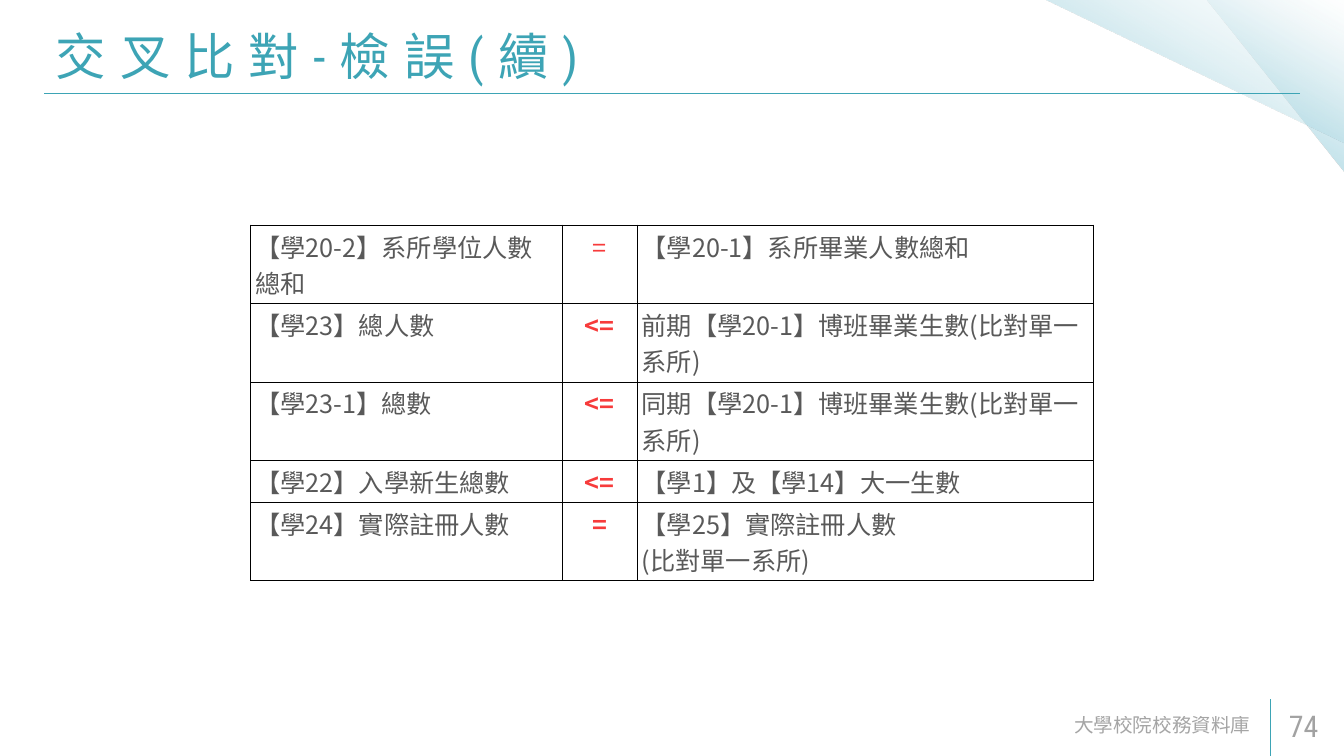
import pptx
import pptx.util
import pptx.dml.color
import pptx.enum.shapes
import pptx.enum.text
import pptx.oxml
import pptx.oxml.ns
import lxml.etree

PX = 9144  # 100 px to the inch
COLORS = {"teal": "3DA4B5", "grey": "808080", "number": "A2A2A2", "body": "595959",
          "red": "F73B3B", "border": "000000",
          "deep": "97D1E0", "mid": "AAD7E2", "pale": "E0F0F4"}
NS = pptx.oxml.ns.nsdecls("a")
ALIGN = pptx.enum.text.PP_ALIGN
ANCHOR = pptx.enum.text.MSO_ANCHOR


def add_run(p, text, size, font, color, bold=False):
    r = p.add_run()
    r.text = text
    r.font.size = pptx.util.Pt(size)
    r.font.name = font
    r.font.bold = bold
    r.font.color.rgb = pptx.dml.color.RGBColor.from_string(COLORS[color])
    return r


def set_frame(tf, align):
    tf.word_wrap = True
    tf.auto_size = pptx.enum.text.MSO_AUTO_SIZE.NONE
    tf.vertical_anchor = ANCHOR.MIDDLE
    tf.margin_left = tf.margin_right = 18 * PX
    tf.margin_top = tf.margin_bottom = 9 * PX
    p = tf.paragraphs[0]
    p.alignment = align
    return p


prs = pptx.Presentation()
prs.slide_width, prs.slide_height = 2000 * PX, 1125 * PX
s = prs.slides.add_slide(prs.slide_layouts[5])

# Corner triangles, fading out along the gradient
stops = "".join(
    f'<a:gs pos="{pos}000"><a:srgbClr val="{COLORS[name]}"><a:alpha val="{alpha}000"/></a:srgbClr></a:gs>'
    for pos, name, alpha in [(0, "deep", 100), (50, "mid", 44), (100, "pale", 0)])
gradient = (f'<a:gradFill {NS} rotWithShape="1"><a:gsLst>{stops}</a:gsLst>'
            '<a:lin ang="7200000" scaled="0"/></a:gradFill>')
for x, w, h in [(1796, 204, 257), (1554, 448, 213)]:
    sp = s.shapes.add_shape(pptx.enum.shapes.MSO_SHAPE.RIGHT_TRIANGLE, x * PX, 0, w * PX, h * PX)
    sp.rotation = 180
    sp.shadow.inherit = False
    sp.line.fill.background()
    geometry = sp._element.spPr.find(pptx.oxml.ns.qn("a:prstGeom"))
    geometry.addnext(pptx.oxml.parse_xml(gradient))

# Title rule and footer divider
for x1, y1, x2, y2 in [(66, 139, 1934, 139), (1891, 1125, 1891, 1040)]:
    line = s.shapes.add_connector(pptx.enum.shapes.MSO_CONNECTOR.STRAIGHT,
                                  x1 * PX, y1 * PX, x2 * PX, y2 * PX)
    line.line.color.rgb = pptx.dml.color.RGBColor.from_string(COLORS["teal"])
    line.line.width = pptx.util.Pt(1)
    lxml.etree.SubElement(line._element.spPr, pptx.oxml.ns.qn("a:effectLst"))

# Title
title = s.shapes.title
title.left, title.top, title.width, title.height = 65 * PX, 21 * PX, 1831 * PX, 123 * PX
p = set_frame(title.text_frame, ALIGN.LEFT)
r = add_run(p, "交叉比對-檢誤(續)", 54, "Roboto Condensed", "teal")
r.font._element.set("spc", "1500")

# Footer and slide number
for x, w, text, size, font, color, align in [
        (1029, 850, "大學校院校務資料庫", 21, "Roboto", "grey", ALIGN.RIGHT),
        (1900, 99, "74", 32, "Roboto Condensed", "number", ALIGN.LEFT)]:
    box = s.shapes.add_textbox(x * PX, 1049 * PX, w * PX, 60 * PX)
    r = add_run(set_frame(box.text_frame, align), text, size, font, color)
    if color == "grey":
        srgb = r.font._element.find(".//" + pptx.oxml.ns.qn("a:srgbClr"))
        lxml.etree.SubElement(srgb, pptx.oxml.ns.qn("a:alpha"), val="70000")

# Table of checks
checks = [
    ("【學20-2】系所學位人數總和", "=", "【學20-1】系所畢業人數總和"),
    ("【學23】總人數", "<=", "前期【學20-1】博班畢業生數(比對單一系所)"),
    ("【學23-1】總數", "<=", "同期【學20-1】博班畢業生數(比對單一系所)"),
    ("【學22】入學新生總數", "<=", "【學1】及【學14】大一生數"),
    ("【學24】實際註冊人數", "=", "【學25】實際註冊人數\n(比對單一系所)"),
]
widths = [464, 111, 679]
heights = [97, 97, 97, 53, 97]
table = s.shapes.add_table(len(checks), len(widths), 373 * PX, 335 * PX,
                           sum(widths) * PX, sum(heights) * PX).table
table.first_row = table.horz_banding = False
for column, w in zip(table.columns, widths):
    column.width = w * PX
for row, h in zip(table.rows, heights):
    row.height = h * PX

for i, check in enumerate(checks):
    for j, text in enumerate(check):
        cell = table.cell(i, j)
        cell.margin_left = cell.margin_right = 7 * PX
        cell.margin_top = cell.margin_bottom = 4 * PX
        cell.fill.background()
        p = cell.text_frame.paragraphs[0]
        p.alignment = ALIGN.CENTER if j == 1 else ALIGN.LEFT
        for n, part in enumerate(text.split("\n")):
            if n:
                p.add_line_break()
            r = add_run(p, part, 27, "Noto Sans CJK SC", "red" if j == 1 else "body",
                        bold=j == 1 and i > 0)
            lxml.etree.SubElement(r.font._element, pptx.oxml.ns.qn("a:ea"),
                                  typeface="Noto Sans CJK SC")
        # Cell borders come before the fill
        for k, side in enumerate(["lnL", "lnR", "lnT", "lnB"]):
            cell._tc.get_or_add_tcPr().insert(k, pptx.oxml.parse_xml(
                f'<a:{side} {NS} w="12700"><a:solidFill><a:srgbClr val="{COLORS["border"]}"/>'
                f'</a:solidFill></a:{side}>'))

prs.save("out.pptx")
